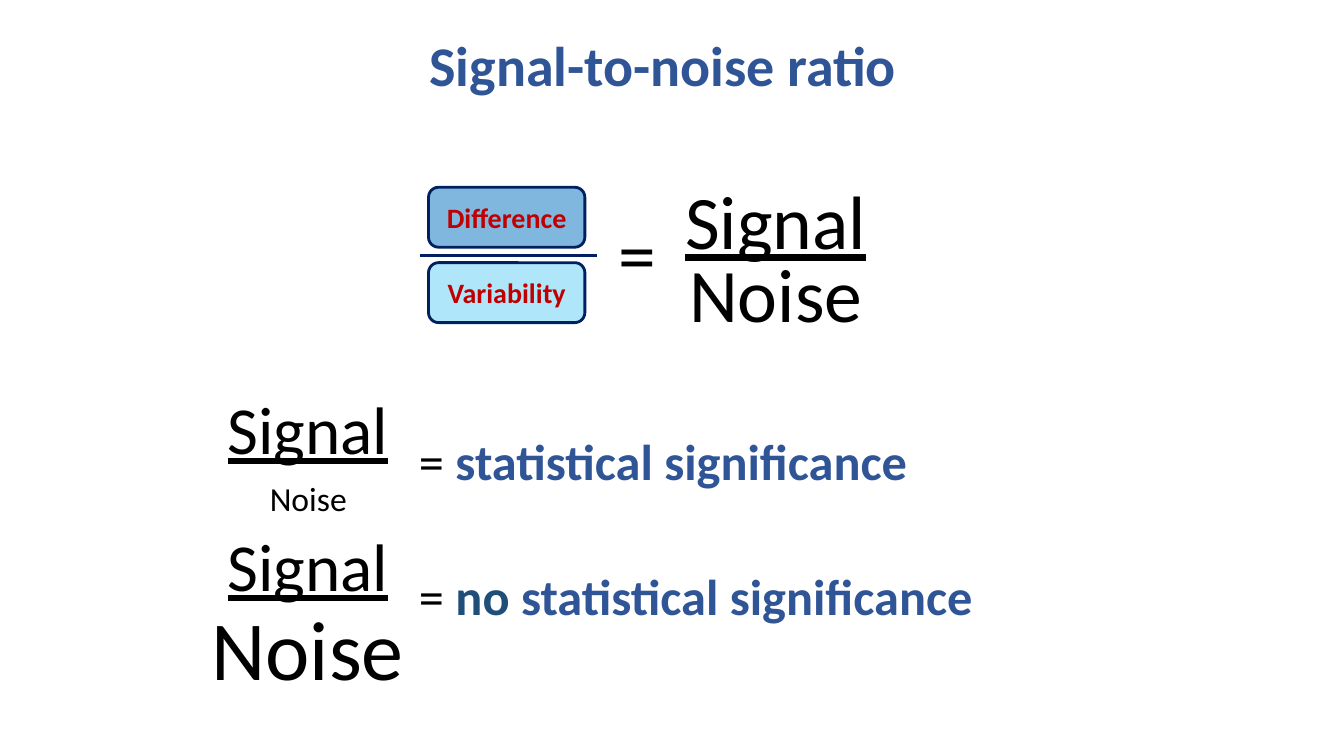
"""Build the signal-to-noise ratio slide."""
from lxml.etree import SubElement
from pptx import Presentation
from pptx.dml.color import RGBColor
from pptx.enum.shapes import MSO_CONNECTOR, MSO_SHAPE
from pptx.enum.text import MSO_ANCHOR, MSO_AUTO_SIZE, PP_ALIGN
from pptx.oxml.ns import qn
from pptx.util import Cm, Pt

BLACK, BLUE, TEAL, NAVY, RED = "000000", "2F5597", "1F4E79", "002060", "C00000"


def color(hex_string):
    return RGBColor.from_string(hex_string)


def write(frame, size, runs, align=PP_ALIGN.LEFT, underline=None):
    frame.word_wrap = False
    paragraph = frame.paragraphs[0]
    paragraph.alignment = align
    paragraph.font.name = "Calibri"
    paragraph.font.size = Pt(size)
    paragraph.font.underline = underline
    for text, hex_string, bold in runs:
        run = paragraph.add_run()
        run.text = text
        run.font.bold = bold
        run.font.color.rgb = color(hex_string)


presentation = Presentation()
presentation.slide_width, presentation.slide_height = Cm(33.87), Cm(19.05)
slide = presentation.slides.add_slide(presentation.slide_layouts[5])

title = slide.shapes.title
title.left, title.top, title.width, title.height = Cm(10.57), Cm(0.64), Cm(12.75), Cm(1.8)
title.text_frame.vertical_anchor = MSO_ANCHOR.TOP
title.text_frame.auto_size = MSO_AUTO_SIZE.SHAPE_TO_FIT_TEXT
write(title.text_frame, 40, [("Signal-to-noise ratio", BLUE, True)])

ratio = slide.shapes.add_group_shape()
for label, top, fill in [("Difference", 4.72, "0070C0"), ("Variability", 6.62, "60CFF6")]:
    term = ratio.shapes.add_shape(MSO_SHAPE.ROUNDED_RECTANGLE, Cm(10.8), Cm(top), Cm(3.94), Cm(1.51))
    term.shadow.inherit = False
    term.fill.solid()
    term.fill.fore_color.rgb = color(fill)
    tint = term.fill._xPr.find(qn("a:solidFill"))[0]
    SubElement(tint, qn("a:alpha"), val="50000")
    term.line.color.rgb = color(NAVY)
    term.line.width = Pt(2)
    term.text_frame.vertical_anchor = MSO_ANCHOR.MIDDLE
    write(term.text_frame, 20, [(label, RED, True)], PP_ALIGN.CENTER)

fraction_bar = ratio.shapes.add_connector(MSO_CONNECTOR.STRAIGHT, Cm(10.59), Cm(6.43), Cm(15.04), Cm(6.43))
fraction_bar.line.color.rgb = color(NAVY)
fraction_bar.line.width = Pt(2.25)
SubElement(fraction_bar._element.spPr, qn("a:effectLst"))

equals = ("= ", BLACK, False)
significance = ("statistical significance", BLUE, True)
signal = [("Signal", BLACK, False)]
noise = [("Noise", BLACK, False)]
formulas = [
    (17.02, 4.27, 5.11, 2.57, 54, signal),
    (17.12, 6.1, 4.93, 2.57, 54, noise),
    (5.49, 9.63, 4.6, 2.31, 48, signal),
    (6.55, 11.91, 2.46, 1.27, 24, noise),
    (5.08, 14.91, 5.41, 2.82, 60, noise),
    (10.31, 10.72, 12.98, 1.8, 36, [equals, significance]),
    (10.31, 14.12, 14.63, 1.8, 36, [equals, ("no ", TEAL, True), significance]),
    (5.49, 13.08, 4.6, 2.31, 48, signal),
    (15.34, 5.08, 1.47, 2.57, 54, [("=", BLACK, False)]),
]
for left, top, width, height, size, runs in formulas:
    formula = slide.shapes.add_textbox(Cm(left), Cm(top), Cm(width), Cm(height))
    formula.text_frame.auto_size = MSO_AUTO_SIZE.SHAPE_TO_FIT_TEXT
    write(formula.text_frame, size, runs, underline=True if runs is signal else None)

presentation.save("out.pptx")
